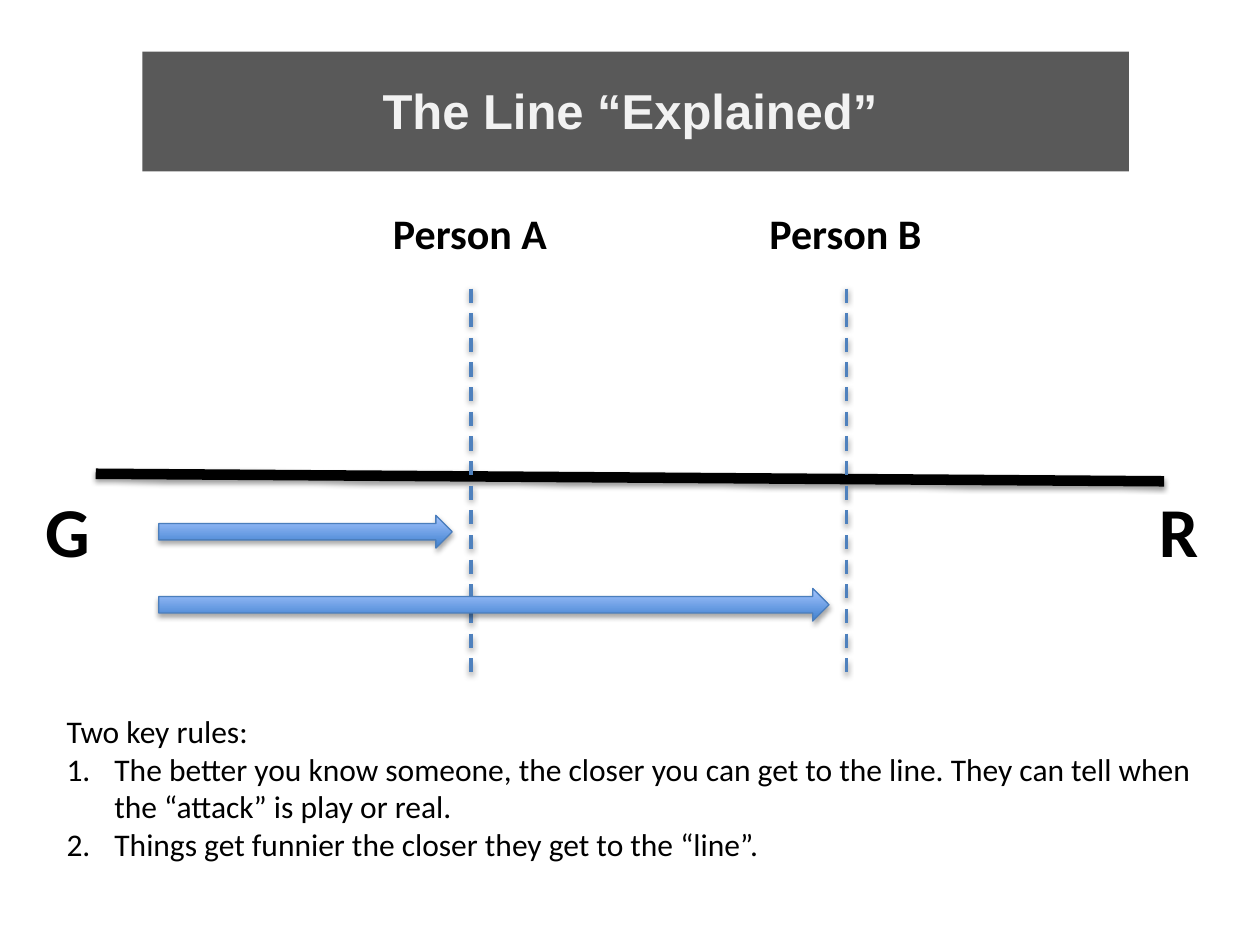
from lxml import etree
from pptx import Presentation
from pptx.dml.color import RGBColor
from pptx.enum.dml import MSO_LINE
from pptx.enum.shapes import MSO_CONNECTOR, MSO_SHAPE
from pptx.enum.text import MSO_ANCHOR, MSO_AUTO_SIZE, PP_ALIGN
from pptx.oxml.ns import qn
from pptx.util import Inches, Pt

LEFT, CENTER = PP_ALIGN.LEFT, PP_ALIGN.CENTER
TOP, MIDDLE = MSO_ANCHOR.TOP, MSO_ANCHOR.MIDDLE
GROW, FIXED = MSO_AUTO_SIZE.SHAPE_TO_FIT_TEXT, MSO_AUTO_SIZE.NONE
STRAIGHT = MSO_CONNECTOR.STRAIGHT
RECT, ARROW = MSO_SHAPE.RECTANGLE, MSO_SHAPE.RIGHT_ARROW
DASH = MSO_LINE.DASH

BLACK = RGBColor(0x00, 0x00, 0x00)
GRAY = RGBColor(0x59, 0x59, 0x59)
PALE = RGBColor(0xF2, 0xF2, 0xF2)
BLUE = RGBColor(0x4F, 0x81, 0xBD)
EDGE = RGBColor(0x4B, 0x7E, 0xBC)
DEEP = RGBColor(0x3F, 0x80, 0xCE)
LIGHT = RGBColor(0xA4, 0xC4, 0xFF)

deck = Presentation()
deck.slide_width, deck.slide_height = Inches(10), Inches(7.5)
COL, ROW = deck.slide_width / 100, deck.slide_height / 75


def span(x, y, w, h):
    return round(x * COL), round(y * ROW), round(w * COL), round(h * ROW)


def write(shape, *lines, size=18, font="Calibri", color=BLACK, bold=False,
          align=LEFT, anchor=TOP, fit=GROW, first=None):
    frame = shape.text_frame
    frame.word_wrap = True
    frame.auto_size = fit
    frame.vertical_anchor = anchor
    frame.text = "\n".join(lines)
    for i, para in enumerate(frame.paragraphs):
        if first is not None and i >= first:
            props = para._p.get_or_add_pPr()
            props.set("marL", str(Inches(0.38)))
            props.set("indent", str(-Inches(0.38)))
            etree.SubElement(props, qn("a:buFont"), typeface="+mj-lt")
            etree.SubElement(props, qn("a:buAutoNum"), type="arabicPeriod")
        para.alignment = align
        for run in para.runs:
            run.font.size = Pt(size)
            run.font.name = font
            run.font.bold = bold
            run.font.color.rgb = color


slide = deck.slides.add_slide(deck.slide_layouts[5])
shapes = slide.shapes
title = shapes.title

band = shapes.add_shape(RECT, *span(11.3, 4.1, 78.3, 9.5))
band.shadow.inherit = False
band.fill.solid()
band.fill.fore_color.rgb = GRAY
band.line.fill.background()
title.element.addprevious(band.element)

title.left, title.top, title.width, title.height = span(0, 6.2, 100, 5.1)
write(title, "The Line “Explained”", size=28, font="Arial", color=PALE,
      bold=True, align=CENTER, anchor=MIDDLE, fit=FIXED)

axis = shapes.add_connector(STRAIGHT, *span(7.6, 37.6, 92.4, 38.2))
axis.line.color.rgb = BLACK
axis.line.width = Pt(6)

for mark, x in (("G", 2.6), ("R", 91)):
    write(shapes.add_textbox(*span(x, 38.2, 10, 7.7)), mark, size=40, bold=True)

for name, x in (("Person A", 37.4), ("Person B", 67.2)):
    group = shapes.add_group_shape().shapes
    rule = group.add_connector(STRAIGHT, *span(x, 22.9, x, 53.6))
    rule.line.color.rgb = BLUE
    rule.line.width = Pt(2)
    rule.line.dash_style = DASH
    label = group.add_textbox(*span(x - 10.15, 16, 20.1, 5))
    write(label, name, size=24, bold=True, align=CENTER)

for y, wide in ((40.9, 23.3), (46.7, 53.2)):
    arrow = shapes.add_shape(ARROW, *span(12.6, y, wide, 2.6))
    arrow.fill.gradient()
    arrow.fill.gradient_angle = 90
    for stop, color, place in zip(arrow.fill.gradient_stops, (DEEP, LIGHT), (0, 1)):
        stop.color.rgb = color
        stop.position = place
    arrow.line.color.rgb = EDGE
    arrow.line.width = Pt(0.75)

write(shapes.add_textbox(*span(4.3, 56, 91.6, 13.1)),
      "Two key rules:",
      "The better you know someone, the closer you can get to the line. "
      "They can tell when the “attack” is play or real.",
      "Things get funnier the closer they get to the “line”.",
      first=1)

deck.save("out.pptx")
